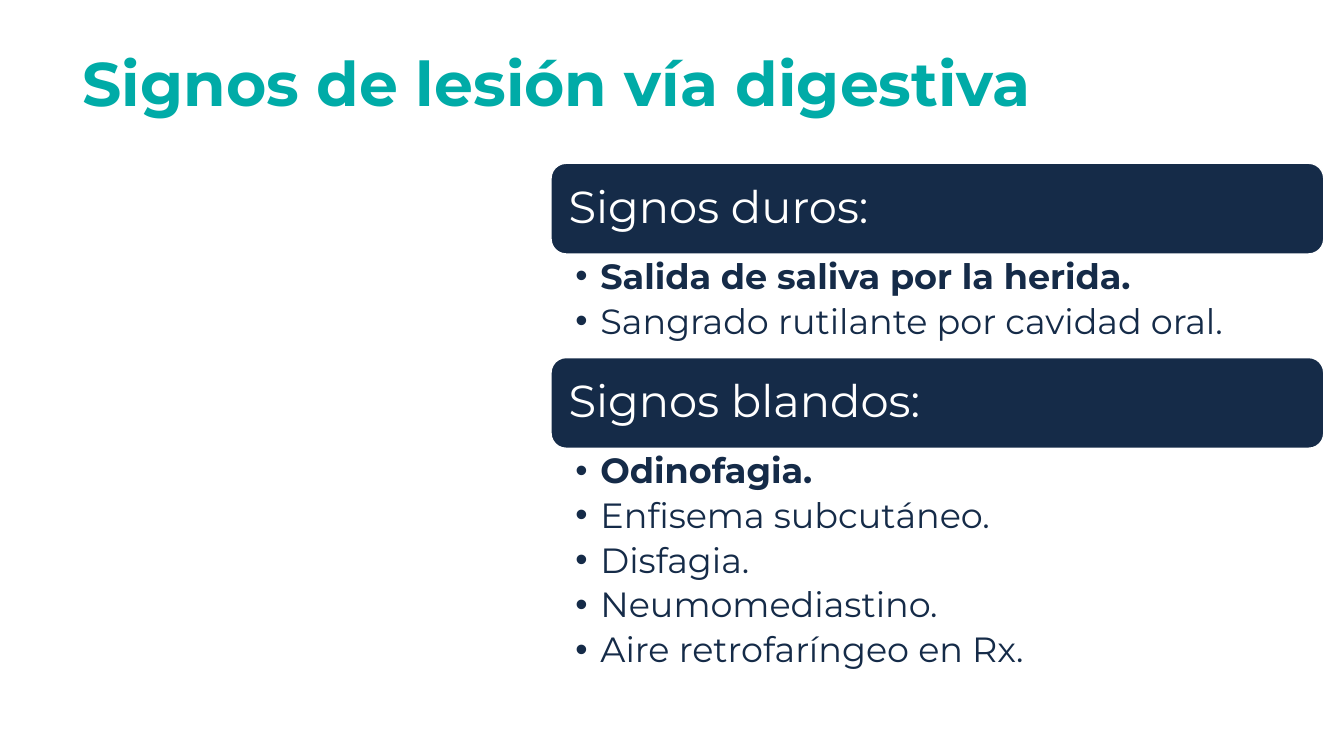
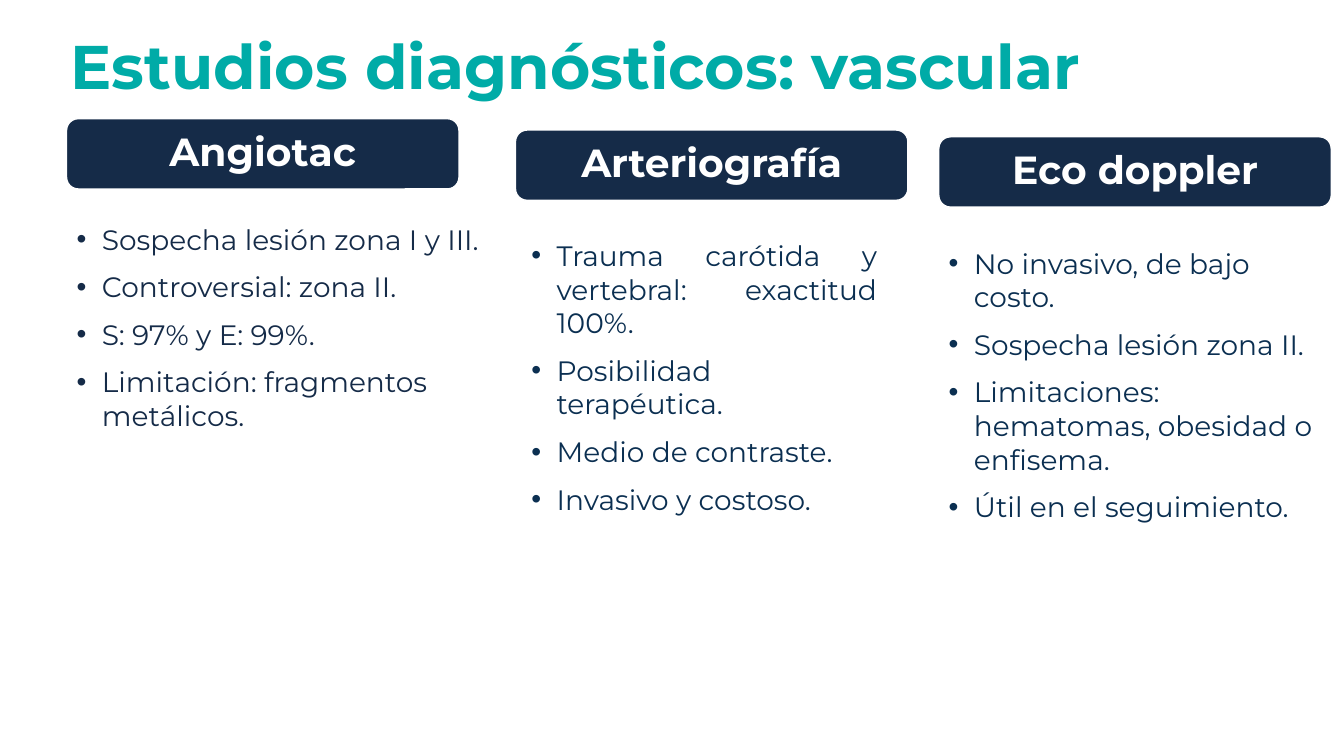
from lxml import etree
from pptx import Presentation, util as u
from pptx.dml.color import RGBColor
from pptx.enum import shapes, text
from pptx.oxml.ns import qn

FONT = "Montserrat"
TEAL, NAVY, BLUE, WHITE = "00ABA7", "152B48", "0B2F51", "FFFFFF"
TITLE_ONE_LIST, TITLE_TWO_LISTS = 1, 3
LEFT, CENTER, JUSTIFY = text.PP_ALIGN.LEFT, text.PP_ALIGN.CENTER, text.PP_ALIGN.JUSTIFY


def color(value):
    return RGBColor.from_string(value)


class Builder:
    """Holds the deck, its style and the current slide; lengths use a 100 x 100 grid."""

    def __init__(self):
        self.deck = Presentation()
        self.deck.slide_width, self.deck.slide_height = u.Inches(13.33), u.Inches(7.5)

    def area(self, left, top, width, height):
        column, row = self.deck.slide_width / 100, self.deck.slide_height / 100
        return [round(n) for n in (left * column, top * row, width * column, height * row)]

    def place(self, box, grid):
        box.left, box.top, box.width, box.height = self.area(*grid)

    def frame(self, box, anchor, sides=0.1, ends=0.05):
        frame = box.text_frame
        frame.word_wrap = True
        frame.auto_size = text.MSO_AUTO_SIZE.NONE
        frame.vertical_anchor = anchor
        frame.margin_left = frame.margin_right = u.Inches(sides)
        frame.margin_top = frame.margin_bottom = u.Inches(ends)
        return frame

    def add_words(self, para, words, size, ink, bold=False, align=LEFT, spacing=0.9):
        para.alignment, para.line_spacing = align, spacing
        span = para.add_run()
        span.text = words
        font = span.font
        font.name, font.size, font.bold = FONT, u.Pt(size), bold
        font.color.rgb = color(ink)

    def bullet(self, para):
        props = para._p.get_or_add_pPr()
        props.set("marL", str(u.Inches(0.25)))
        props.set("indent", str(-u.Inches(0.25)))
        etree.SubElement(props, qn("a:buFont")).set("typeface", "Arial")
        etree.SubElement(props, qn("a:buChar")).set("char", "•")

    # New slide with its title
    def page(self, layout, title, grid):
        self.slide = self.deck.slides.add_slide(self.deck.slide_layouts[layout])
        box = self.slide.shapes.title
        self.bodies = [p for p in self.slide.placeholders if p.placeholder_format.idx != 0]
        self.place(box, grid)
        frame = self.frame(box, text.MSO_ANCHOR.MIDDLE)
        self.add_words(frame.paragraphs[0], title, 44, TEAL, bold=True)

    # Rounded heading bar
    def heading(self, words, grid, size, bold=False, align=LEFT):
        box = self.slide.shapes.add_shape(shapes.MSO_SHAPE.ROUNDED_RECTANGLE, *self.area(*grid))
        box.shadow.inherit = False
        box.fill.solid()
        box.fill.fore_color.rgb = color(NAVY)
        box.line.color.rgb = color(WHITE)
        box.line.width = u.Pt(1)
        frame = self.frame(box, text.MSO_ANCHOR.MIDDLE, sides=0.13)
        self.add_words(frame.paragraphs[0], words, size, WHITE, bold, align)

    # Bulleted list: takes the next body placeholder, then plain text boxes
    def bullets(self, items, grid, size, ink=NAVY, align=LEFT, spacing=1.0,
                before=0, after=0, sides=0.1, first_bold=False):
        if self.bodies:
            box = self.bodies.pop(0)
            self.place(box, grid)
        else:
            box = self.slide.shapes.add_textbox(*self.area(*grid))
        frame = self.frame(box, text.MSO_ANCHOR.TOP, sides)
        for number, item in enumerate(items):
            para = frame.add_paragraph() if number else frame.paragraphs[0]
            self.bullet(para)
            para.space_before = u.Pt(before if number else 0)
            para.space_after = u.Pt(after)
            self.add_words(para, item, size, ink, first_bold and number == 0, align, spacing)


def digestive_signs(builder):
    builder.page(TITLE_TWO_LISTS, "Signos de lesión vía digestiva", (5.4, 2.4, 79.3, 18.1))
    left, top, width, bar = 41, 21.6, 57.5, 12
    groups = [
        ("Signos duros:", 13.7,
         ["Salida de saliva por la herida.", "Sangrado rutilante por cavidad oral."]),
        ("Signos blandos:", 34.8,
         ["Odinofagia.", "Enfisema subcutáneo.", "Disfagia.", "Neumomediastino.",
          "Aire retrofaríngeo en Rx."]),
    ]
    for name, height, signs in groups:
        builder.heading(name, (left, top, width, bar), 32)
        builder.bullets(signs, (left, top + bar, width, height), 25,
                        spacing=0.9, after=5, sides=0.24, first_bold=True)
        top += bar + height


def vascular_studies(builder):
    builder.page(TITLE_ONE_LIST, "Estudios diagnósticos: vascular", (4.5, 0.4, 86.3, 17.5))
    # Name, bar corner, list left, top and width, text colour, alignment, items
    studies = [
        ("Angiotac", (4.95, 15.7), (4.95, 28.7, 32.2), NAVY, LEFT,
         ["Sospecha lesión zona I y III.", "Controversial: zona II.", "S: 97% y E: 99%.",
          "Limitación: fragmentos metálicos."]),
        ("Arteriografía", (38.35, 17.2), (38.8, 30.9, 27.2), BLUE, JUSTIFY,
         ["Trauma carótida y vertebral: exactitud 100%.", "Posibilidad terapéutica.",
          "Medio de contraste.", "Invasivo y costoso."]),
        ("Eco doppler", (69.85, 18.1), (69.85, 31.9, 28.6), BLUE, LEFT,
         ["No invasivo, de bajo costo.", "Sospecha lesión zona II.",
          "Limitaciones: hematomas, obesidad o enfisema.", "Útil en el seguimiento."]),
    ]
    for name, corner, place, ink, align, items in studies:
        builder.heading(name, (*corner, 29.2, 9.3), 28, bold=True, align=CENTER)
        builder.bullets(items, (*place, 41.9), 20, ink, align, before=10)


def main():
    builder = Builder()
    digestive_signs(builder)
    vascular_studies(builder)
    builder.deck.save("out.pptx")


if __name__ == "__main__":
    main()
